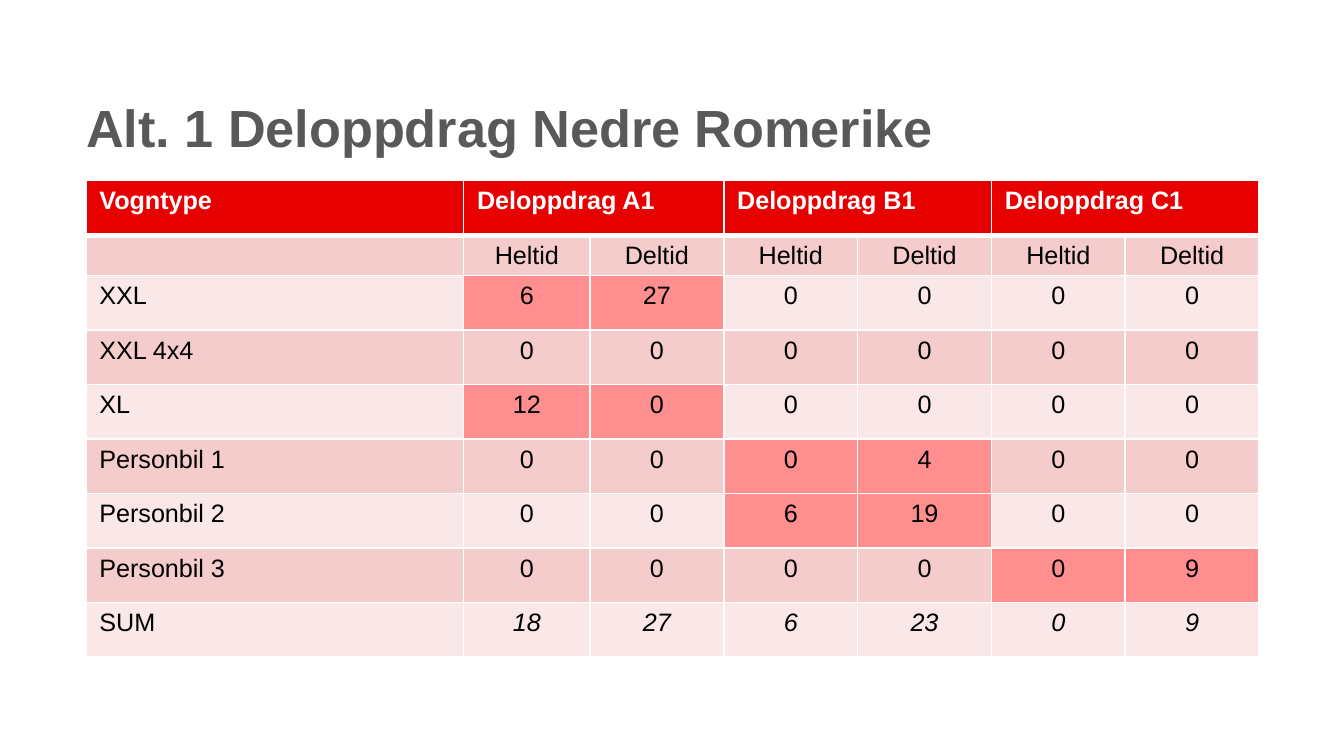
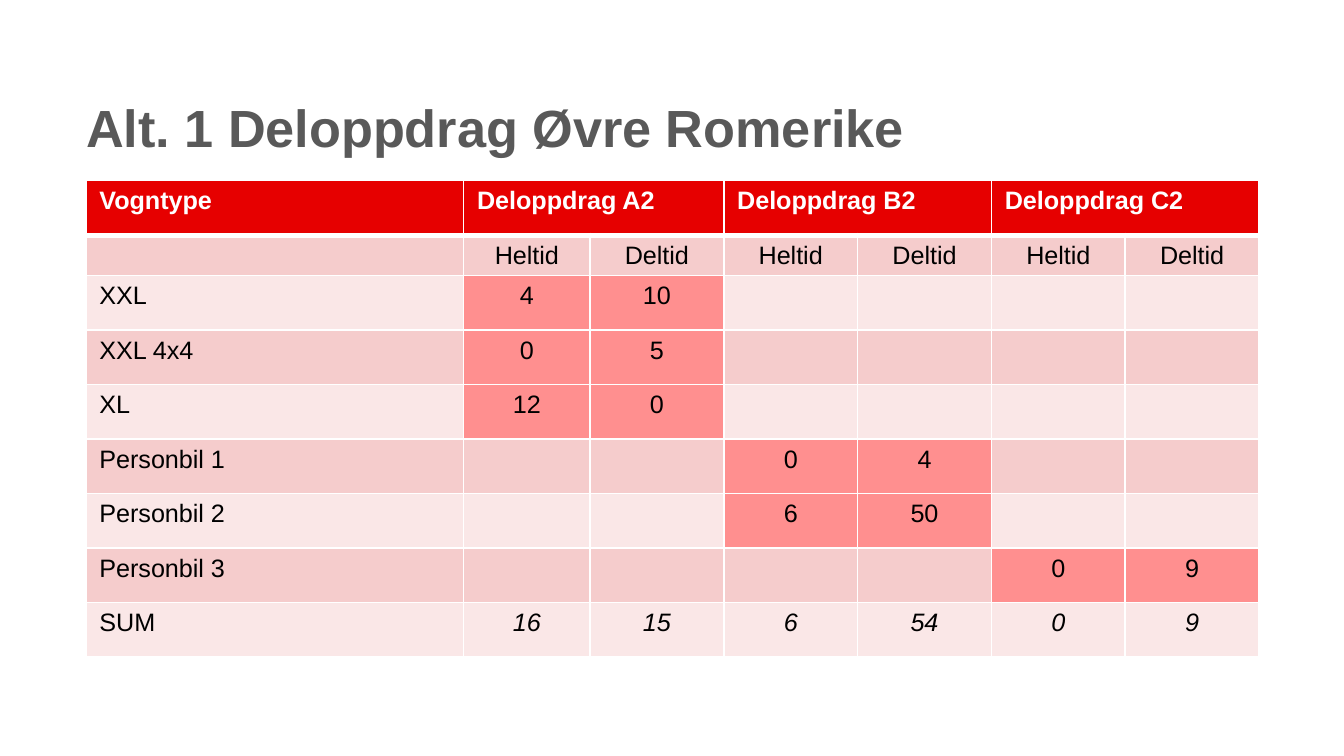
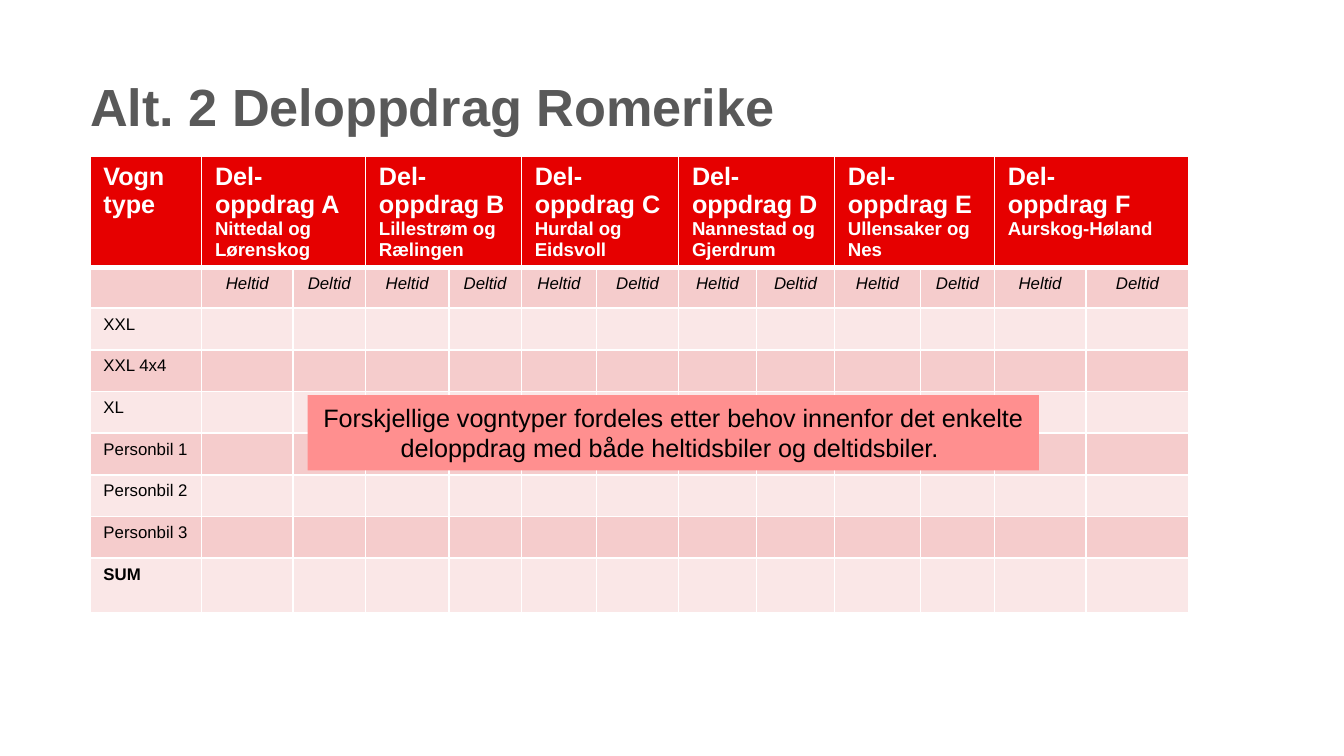
from lxml import etree
from pptx import Presentation
from pptx.dml.color import RGBColor
from pptx.enum import shapes, text
from pptx.oxml.ns import qn
from pptx.util import Inches, Pt

THEME = {
    "font": "Arial", "title": 28, "body": 13.5, "place": 10, "small": 9,
    "grey": "595959", "red": "E60000", "mark": "FF8F8F", "white": "FFFFFF", "black": "000000",
    "bands": ("F5CCCC", "FAE7E7"),
}
LEFT, CENTER = text.PP_ALIGN.LEFT, text.PP_ALIGN.CENTER


def write(tf, lines, color, align=LEFT, **fmt):
    for i, (line, size) in enumerate(lines):
        p = tf.paragraphs[0] if i == 0 else tf.add_paragraph()
        p.alignment = align
        if not line:
            etree.SubElement(p._p, qn("a:endParaRPr"), sz=str(int(size * 100)))
            continue
        r = p.add_run()
        r.text = line
        r.font.color.rgb = RGBColor.from_string(color)
        for name, value in {"name": THEME["font"], "size": Pt(size), **fmt}.items():
            setattr(r.font, name, value)


def paint(cell, color, top=1, bottom=1):
    cell.margin_bottom = 0
    tcPr = cell._tc.get_or_add_tcPr()
    for side, width in {"L": 1, "R": 1, "T": top, "B": bottom}.items():
        ln = etree.SubElement(tcPr, qn(f"a:ln{side}"), w=str(Pt(width)))
        fill = etree.SubElement(ln, qn("a:solidFill"))
        etree.SubElement(fill, qn("a:srgbClr"), val=THEME["white"])
    cell.fill.solid()
    cell.fill.fore_color.rgb = RGBColor.from_string(color)


VEHICLES = ["XXL", "XXL 4x4", "XL", "Personbil 1", "Personbil 2", "Personbil 3"]
BODY, PLACE = THEME["body"], THEME["place"]
ALT1 = {
    "left": 0.64, "title_top": 0.71, "top": 1.34, "size": BODY, "italic": False, "sum_bold": False,
    "cols": [2.81, 0.94] + [4.98 / 5] * 5, "rows": [0.41, 0.3] + [2.84 / 7] * 7,
}
SLIDES = [
    {**ALT1, "title": "Alt. 1 Deloppdrag Nedre Romerike", "filler": "0",
     "heads": [[(h, BODY)] for h in ("Vogntype", "Deloppdrag A1", "Deloppdrag B1", "Deloppdrag C1")],
     "fleet": [(0, 6, 27), (0, 0, 0), (0, 12, 0), (1, 0, 4), (1, 6, 19), (2, 0, 9)]},
    {**ALT1, "title": "Alt. 1 Deloppdrag Øvre Romerike", "filler": "",
     "heads": [[(h, BODY)] for h in ("Vogntype", "Deloppdrag A2", "Deloppdrag B2", "Deloppdrag C2")],
     "fleet": [(0, 4, 10), (0, 0, 5), (0, 12, 0), (1, 0, 4), (1, 6, 50), (2, 0, 9)]},
    {"title": "Alt. 2 Deloppdrag Romerike", "filler": "", "fleet": [],
     "left": 0.67, "title_top": 0.55, "top": 1.16, "size": THEME["small"], "italic": True, "sum_bold": True,
     "cols": [0.83, 0.68, 0.54, 0.62, 0.54, 0.56, 0.61, 0.58, 0.58, 0.64, 0.55, 0.68, 0.77],
     "rows": [0.83, 0.3] + [0.31] * 6 + [0.41],
     "heads": [
         [("Vogn", BODY), ("type", BODY)],
         [("Del-oppdrag A", BODY), ("Nittedal og Lørenskog", PLACE)],
         [("Del-oppdrag B", BODY), ("Lillestrøm og Rælingen", PLACE)],
         [("Del-", BODY), ("oppdrag C", BODY), ("Hurdal og Eidsvoll", PLACE)],
         [("Del-", BODY), ("oppdrag D", BODY), ("Nannestad og", PLACE), ("Gjerdrum", PLACE)],
         [("Del-oppdrag E", BODY), ("Ullensaker og Nes", PLACE)],
         [("Del-", BODY), ("oppdrag F", BODY), ("Aurskog-Høland", PLACE)],
     ]},
]

prs = Presentation()
prs.slide_width, prs.slide_height = Inches(10), Inches(10 * 9 / 16)

for d in SLIDES:
    s = prs.slides.add_slide(prs.slide_layouts[5])
    sp = s.shapes.title
    sp.left, sp.top, sp.width, sp.height = map(Inches, (d["left"], d["title_top"], 8.73, 0.47))
    tf = sp.text_frame
    frame = {"margin_left": 0, "margin_top": 0, "margin_right": 0, "margin_bottom": 0, "word_wrap": True,
             "vertical_anchor": text.MSO_ANCHOR.MIDDLE, "auto_size": text.MSO_AUTO_SIZE.SHAPE_TO_FIT_TEXT}
    for name, value in frame.items():
        setattr(tf, name, value)
    write(tf, [(d["title"], THEME["title"])], THEME["grey"], bold=True)

    cols, rows = d["cols"], d["rows"]
    table = s.shapes.add_table(len(rows), len(cols), Inches(d["left"]), Inches(d["top"]),
                               Inches(sum(cols)), Inches(sum(rows))).table
    for col, width in zip(table.columns, cols):
        col.width = Inches(width)
    for row, height in zip(table.rows, rows):
        row.height = Inches(height)

    for c in range(len(cols)):
        paint(table.cell(0, c), THEME["red"], bottom=3)
    for i, lines in enumerate(d["heads"]):
        c = max(0, 2 * i - 1)
        if i:
            table.cell(0, c).merge(table.cell(0, c + 1))
        write(table.cell(0, c).text_frame, lines, THEME["white"], bold=True)

    groups = len(d["heads"]) - 1
    body = [[""] + ["Heltid", "Deltid"] * groups]
    body += [[v] + [d["filler"]] * 2 * groups for v in VEHICLES]
    body.append(["SUM"] + [""] * 2 * groups)
    marked = set()
    totals = [0] * 2 * groups
    for r, (group, *counts) in enumerate(d["fleet"], 1):
        for c, count in enumerate(counts, 2 * group + 1):
            body[r][c] = str(count)
            totals[c - 1] += count
            if any(counts):
                marked.add((r, c))
    if d["fleet"]:
        body[-1][1:] = map(str, totals)

    for r, values in enumerate(body):
        for c, value in enumerate(values):
            cell = table.cell(r + 1, c)
            paint(cell, THEME["mark"] if (r, c) in marked else THEME["bands"][r % 2], top=1 if r else 3)
            is_sum = r == len(body) - 1
            write(cell.text_frame, [(value, d["size"])], THEME["black"], CENTER if c else LEFT,
                  bold=is_sum and d["sum_bold"],
                  italic=c > 0 and (is_sum or r == 0 and d["italic"]))

sp = s.shapes.add_shape(shapes.MSO_SHAPE.RECTANGLE, Inches(2.29), Inches(2.94), Inches(5.44), Inches(0.56))
sp.shadow.inherit = False
sp.fill.solid()
sp.fill.fore_color.rgb = RGBColor.from_string(THEME["mark"])
sp.line.fill.background()
sp.text_frame.word_wrap = True
sp.text_frame.auto_size = text.MSO_AUTO_SIZE.SHAPE_TO_FIT_TEXT
write(sp.text_frame, [("Forskjellige vogntyper fordeles etter behov innenfor det enkelte deloppdrag "
                       "med både heltidsbiler og deltidsbiler. ", BODY)], THEME["black"], CENTER)

prs.save("out.pptx")
